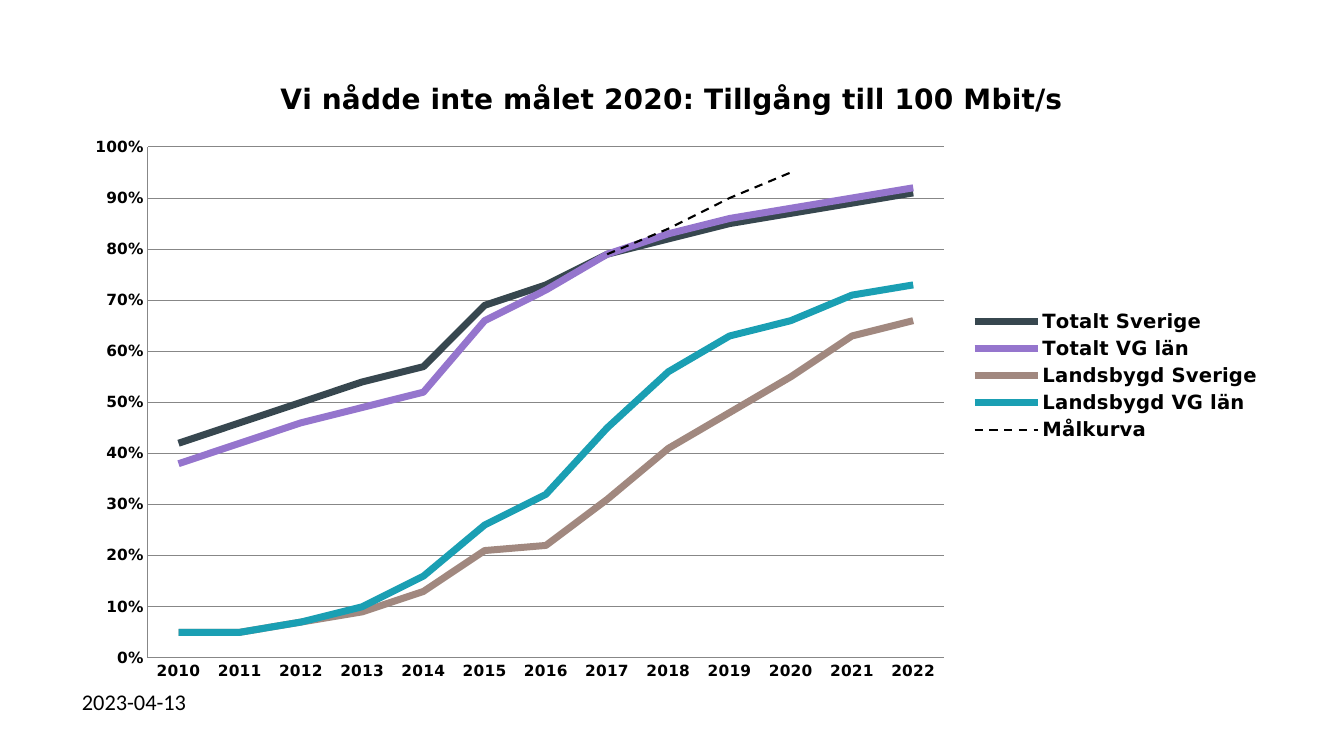
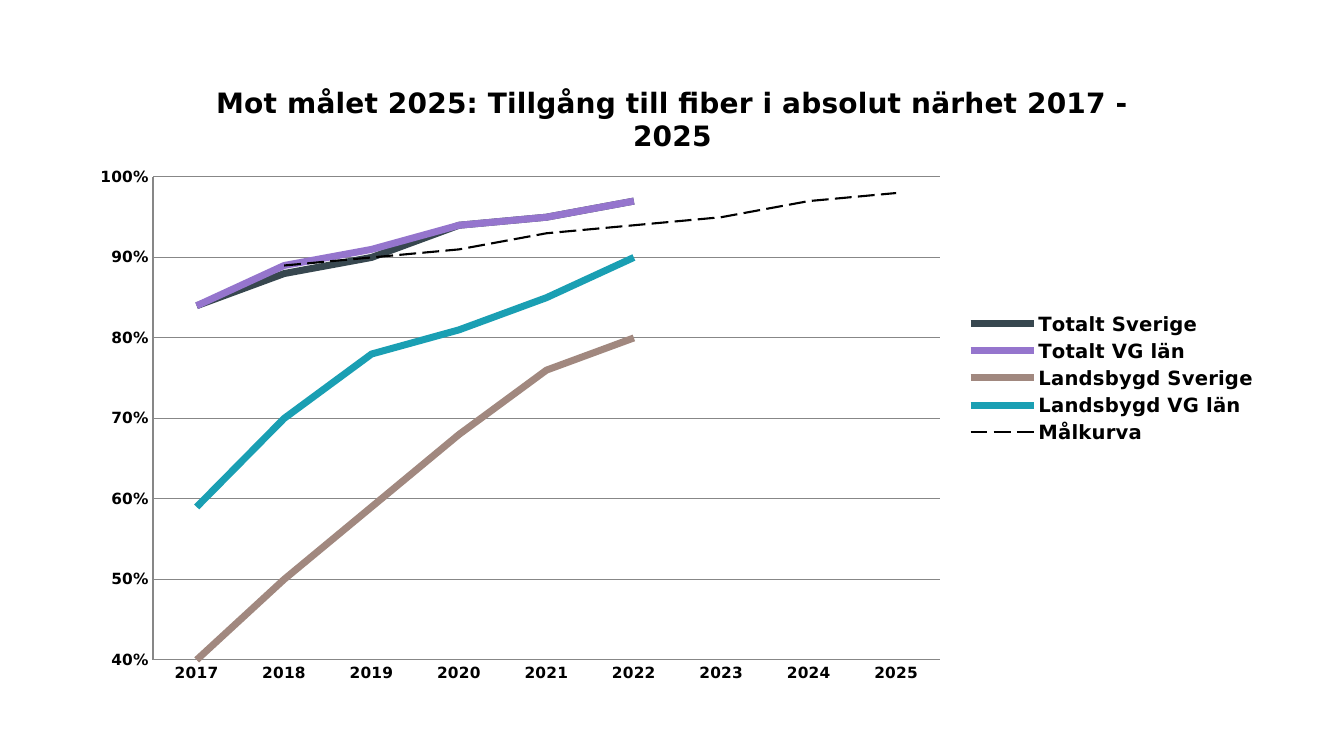
from lxml.etree import SubElement
from pptx import Presentation
from pptx.chart.data import CategoryChartData
from pptx.dml.color import RGBColor
from pptx.enum.chart import XL_CHART_TYPE, XL_LEGEND_POSITION, XL_TICK_MARK
from pptx.enum.dml import MSO_LINE
from pptx.enum.text import MSO_ANCHOR
from pptx.oxml.ns import qn
from pptx.util import Emu, Pt

SLIDE_WIDTH, SLIDE_HEIGHT = 1344, 756
EMU_PER_PX = 12192000 / SLIDE_WIDTH
BLACK, GRID_GREY = "000000", "878787"
CHART_FONT, DATE_FONT = "DejaVu Sans", "Calibri"
SERIES_COLORS = {
    "Totalt Sverige": "37474F",
    "Totalt VG län": "9575CD",
    "Landsbygd Sverige": "A1887F",
    "Landsbygd VG län": "1A9FB3",
}
TARGET = "Målkurva"

# Boxes are left, top, width, height; the plot box is relative to the chart box.
COVERAGE_2020 = {
    "title": "Vi nådde inte målet 2020: Tillgång till 100 Mbit/s",
    "box": (72, 57, 1200, 637),
    "plot": (76, 90, 796, 511),
    "years": range(2010, 2023),
    "minimum": 0,
    "dash": MSO_LINE.DASH,
    "values": {
        "Totalt Sverige": [0.42, 0.46, 0.5, 0.54, 0.57, 0.69, 0.73, 0.79, 0.82,
                           0.85, 0.87, 0.89, 0.91],
        "Totalt VG län": [0.38, 0.42, 0.46, 0.49, 0.52, 0.66, 0.72, 0.79, 0.83,
                          0.86, 0.88, 0.9, 0.92],
        "Landsbygd Sverige": [0.05, 0.05, 0.07, 0.09, 0.13, 0.21, 0.22, 0.31,
                              0.41, 0.48, 0.55, 0.63, 0.66],
        "Landsbygd VG län": [0.05, 0.05, 0.07, 0.1, 0.16, 0.26, 0.32, 0.45,
                             0.56, 0.63, 0.66, 0.71, 0.73],
        TARGET: [None] * 7 + [0.79, 0.84, 0.9, 0.95] + [None] * 2,
    },
}
FIBRE_2025 = {
    "title": "Mot målet 2025: Tillgång till fiber i absolut närhet 2017 - 2025",
    "box": (77, 61, 1191, 634),
    "plot": (76, 116, 787, 483),
    "years": range(2017, 2026),
    "minimum": 0.4,
    "dash": MSO_LINE.LONG_DASH,
    "values": {
        "Totalt Sverige": [0.84, 0.88, 0.9, 0.94, 0.95, 0.97] + [None] * 3,
        "Totalt VG län": [0.84, 0.89, 0.91, 0.94, 0.95, 0.97] + [None] * 3,
        "Landsbygd Sverige": [0.4, 0.5, 0.59, 0.68, 0.76, 0.8] + [None] * 3,
        "Landsbygd VG län": [0.59, 0.7, 0.78, 0.81, 0.85, 0.9] + [None] * 3,
        TARGET: [None, 0.89, 0.9, 0.91, 0.93, 0.94, 0.95, 0.97, 0.98],
    },
}


def px(length):
    return Emu(round(length * EMU_PER_PX))


def color(value):
    return RGBColor.from_string(value)


def set_font(font, size, bold=True, name=CHART_FONT):
    settings = {"size": Pt(size), "bold": bold, "name": name}
    for attribute, value in settings.items():
        setattr(font, attribute, value)
    font.color.rgb = color(BLACK)


def set_line(line, value, width):
    line.color.rgb = color(value)
    line.width = Pt(width)


def place_plot(chart, plot, box):
    """Fix the inner plot area at a box measured within the chart."""
    area = chart.element.find(".//" + qn("c:plotArea"))
    for old in area.findall(qn("c:layout")):
        area.remove(old)
    layout = area.makeelement(qn("c:layout"))
    area.insert(0, layout)
    manual = SubElement(layout, qn("c:manualLayout"))
    left, top, width, height = plot
    settings = {
        "layoutTarget": "inner", "xMode": "edge", "yMode": "edge",
        "x": left / box[2], "y": top / box[3],
        "w": width / box[2], "h": height / box[3],
    }
    for tag, value in settings.items():
        SubElement(manual, qn("c:" + tag)).set("val", str(value))


def style_axes(chart, minimum):
    scale = {"minimum_scale": minimum, "maximum_scale": 1, "major_unit": 0.1,
             "has_major_gridlines": True}
    for attribute, value in scale.items():
        setattr(chart.value_axis, attribute, value)
    labels = chart.value_axis.tick_labels
    labels.number_format, labels.number_format_is_linked = "0%", False
    set_line(chart.value_axis.major_gridlines.format.line, GRID_GREY, 0.75)
    for axis in (chart.category_axis, chart.value_axis):
        axis.major_tick_mark = axis.minor_tick_mark = XL_TICK_MARK.NONE
        set_line(axis.format.line, GRID_GREY, 0.75)
        set_font(axis.tick_labels.font, 11)


def style_series(chart, dash):
    for series in chart.plots[0].series:
        series.smooth = False
        line = series.format.line
        if series.name == TARGET:
            set_line(line, BLACK, 1.5)
            line.dash_style = dash
        else:
            set_line(line, SERIES_COLORS[series.name], 5)


def add_line_chart(page, content):
    data = CategoryChartData(number_format="0%")
    data.categories = [str(year) for year in content["years"]]
    for name, values in content["values"].items():
        data.add_series(name, values)
    box = content["box"]
    chart = page.shapes.add_chart(
        XL_CHART_TYPE.LINE, *map(px, box), data).chart
    set_font(chart.font, 10, bold=False)
    chart.plots[0].vary_by_categories = False

    title = chart.chart_title
    title.include_in_layout = False
    title.text_frame.text = content["title"]
    set_font(title.text_frame.paragraphs[0].runs[0].font, 20)

    chart.has_legend = True
    chart.legend.position = XL_LEGEND_POSITION.RIGHT
    chart.legend.include_in_layout = False
    set_font(chart.legend.font, 14)

    style_axes(chart, content["minimum"])
    style_series(chart, content["dash"])
    place_plot(chart, content["plot"], box)


def add_date(page, text, box):
    frame = page.shapes.add_textbox(*map(px, box)).text_frame
    frame.word_wrap = True
    frame.vertical_anchor = MSO_ANCHOR.MIDDLE
    para = frame.paragraphs[0]
    para.space_after = Pt(6)
    span = para.add_run()
    span.text = text
    set_font(span.font, 16, bold=False, name=DATE_FONT)


def main():
    deck = Presentation()
    deck.slide_width, deck.slide_height = px(SLIDE_WIDTH), px(SLIDE_HEIGHT)
    blank = deck.slide_layouts[6]

    page = deck.slides.add_slide(blank)
    add_date(page, "2023-04-13", (72, 682, 179, 40))
    add_line_chart(page, COVERAGE_2020)

    add_line_chart(deck.slides.add_slide(blank), FIBRE_2025)
    deck.save("out.pptx")


if __name__ == "__main__":
    main()
